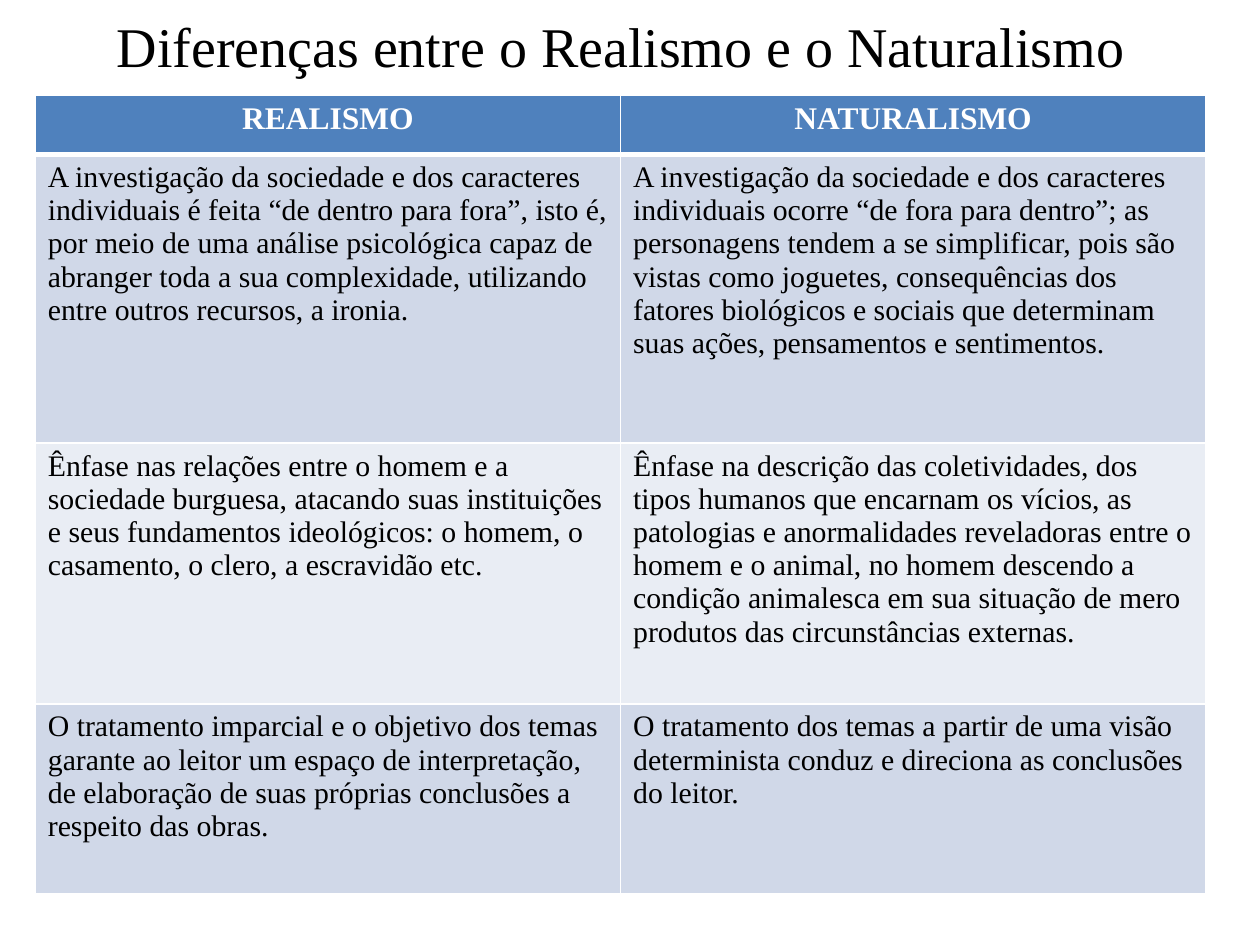
import pptx
import pptx.dml.color
import pptx.enum.text
import pptx.oxml
import pptx.oxml.ns
import pptx.util

WIDTH, HEIGHT = pptx.util.Inches(10), pptx.util.Inches(7.5)
FONT = "Times New Roman"
COLORS = {
    "text": "000000",
    "white": "FFFFFF",
    "header": "4F81BD",
    "odd_row": "D0D8E8",
    "even_row": "E9EDF4",
}
TITLE = "Diferenças entre o Realismo e o Naturalismo"
ROW_HEIGHTS = [0.47, 2.29, 2.07, 1.51]
COMPARISON = [
    ("REALISMO", "NATURALISMO"),
    (
        "A investigação da sociedade e dos caracteres individuais é feita “de dentro "
        "para fora”, isto é, por meio de uma análise psicológica capaz de abranger toda "
        "a sua complexidade, utilizando entre outros recursos, a ironia.",
        "A investigação da sociedade e dos caracteres individuais ocorre “de fora para "
        "dentro”; as personagens tendem a se simplificar, pois são vistas como joguetes, "
        "consequências dos fatores biológicos e sociais que determinam suas ações, "
        "pensamentos e sentimentos.",
    ),
    (
        "Ênfase nas relações entre o homem e a sociedade burguesa, atacando suas "
        "instituições e seus fundamentos ideológicos: o homem, o casamento, o clero, "
        "a escravidão etc.",
        "Ênfase na descrição das coletividades, dos tipos humanos que encarnam os "
        "vícios, as patologias e anormalidades reveladoras entre o homem e o animal, "
        "no homem descendo a condição animalesca em sua situação de mero produtos das "
        "circunstâncias externas.",
    ),
    (
        "O tratamento imparcial e o objetivo dos temas garante ao leitor um espaço de "
        "interpretação, de elaboração de suas próprias conclusões a respeito das obras.",
        "O tratamento dos temas a partir de uma visão determinista conduz e direciona "
        "as conclusões do leitor.",
    ),
]


def rgb(name):
    return pptx.dml.color.RGBColor.from_string(COLORS[name])


def write(frame, text, size, color, bold=False, centered=False):
    frame.text = text
    paragraph = frame.paragraphs[0]
    align = pptx.enum.text.PP_ALIGN
    paragraph.alignment = align.CENTER if centered else align.LEFT
    font = paragraph.runs[0].font
    font.name, font.size, font.bold = FONT, pptx.util.Pt(size), bold
    font.color.rgb = rgb(color)


def add_title(slide):
    title = slide.shapes.add_textbox(
        int(0.043 * WIDTH), int(-0.036 * HEIGHT), int(0.9 * WIDTH), int(HEIGHT / 6)
    )
    title.text_frame.word_wrap = True
    title.text_frame.vertical_anchor = pptx.enum.text.MSO_ANCHOR.MIDDLE
    write(title.text_frame, TITLE, 32, "text", centered=True)


def set_borders(cell, top, bottom):
    """Draw white cell borders; top and bottom widths are in points."""
    properties = cell._tc.get_or_add_tcPr()
    sides = [("lnL", 1), ("lnR", 1), ("lnT", top), ("lnB", bottom)]
    for position, (side, points) in enumerate(sides):
        border = pptx.oxml.parse_xml(
            f'<a:{side} {pptx.oxml.ns.nsdecls("a")} w="{pptx.util.Pt(points)}">'
            f'<a:solidFill><a:srgbClr val="{COLORS["white"]}"/></a:solidFill></a:{side}>'
        )
        properties.insert(position, border)


def fill_cell(cell, text, row):
    is_header = row == 0
    if is_header:
        background = "header"
        write(cell.text_frame, text, 18, "white", bold=True, centered=True)
    else:
        background = "odd_row" if row % 2 else "even_row"
        write(cell.text_frame, text, 17, "text")
    cell.fill.solid()
    cell.fill.fore_color.rgb = rgb(background)
    set_borders(cell, top=3 if row == 1 else 1, bottom=3 if is_header else 1)


def add_comparison(slide):
    row_heights = [pptx.util.Inches(height) for height in ROW_HEIGHTS]
    comparison = slide.shapes.add_table(
        len(COMPARISON), len(COMPARISON[0]),
        int(0.028 * WIDTH), int(0.101 * HEIGHT), int(0.929 * WIDTH), sum(row_heights),
    ).table
    for row, (height, texts) in enumerate(zip(row_heights, COMPARISON)):
        comparison.rows[row].height = height
        for column, text in enumerate(texts):
            fill_cell(comparison.cell(row, column), text, row)


def main():
    deck = pptx.Presentation()
    deck.slide_width, deck.slide_height = WIDTH, HEIGHT
    slide = deck.slides.add_slide(deck.slide_layouts[6])
    add_title(slide)
    add_comparison(slide)
    deck.save("out.pptx")


if __name__ == "__main__":
    main()
